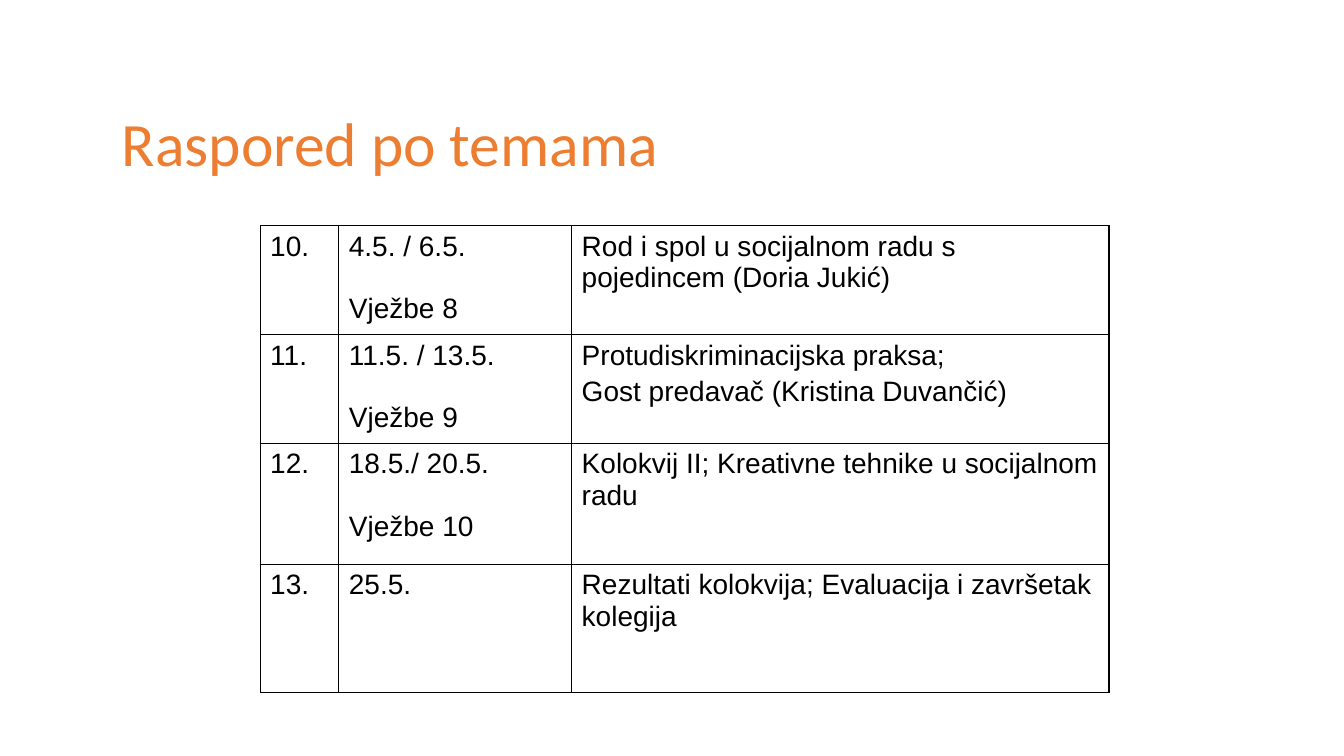
from lxml import etree
from pptx import Presentation
from pptx import util as u
from pptx.dml.color import RGBColor
from pptx.enum import text
from pptx.oxml import ns

COLORS = {"title": "ED7D31", "ink": "000000", "paper": "FFFFFF"}
TITLE_FONT = {"name": "Calibri", "size": u.Pt(44)}
BODY_FONT = {"name": "Arial", "size": u.Pt(20), "bold": False}


def write(para, words, font, color):
    span = para.add_run()
    span.text = words
    for name, value in font.items():
        setattr(span.font, name, value)
    span.font.color.rgb = RGBColor.from_string(COLORS[color])


def add_borders(cell, color, width):
    properties = cell._tc.get_or_add_tcPr()
    for side in ("lnL", "lnR", "lnT", "lnB"):
        line = etree.SubElement(properties, ns.qn(f"a:{side}"), w=str(width))
        fill = etree.SubElement(line, ns.qn("a:solidFill"))
        etree.SubElement(fill, ns.qn("a:srgbClr"), val=COLORS[color])


deck = Presentation()
deck.slide_width, deck.slide_height = u.Inches(13.33), u.Inches(7.5)
page = deck.slides.add_slide(deck.slide_layouts[6])

# Title
box = page.shapes.add_textbox(u.Inches(1.11), u.Inches(0.83), u.Inches(11.56), u.Inches(1.25))
box.text_frame.word_wrap = True
box.text_frame.vertical_anchor = text.MSO_ANCHOR.MIDDLE
title = box.text_frame.paragraphs[0]
title.line_spacing = 0.9
write(title, "Raspored po temama", TITLE_FONT, "title")

# Schedule: number, dates and exercises, topics
schedule = [
    (["10."], ["4.5. / 6.5.", "Vježbe 8"],
     ["Rod i spol u socijalnom radu s pojedincem (Doria Jukić)"]),
    (["11."], ["11.5. / 13.5.", "Vježbe 9"],
     ["Protudiskriminacijska praksa;", "Gost predavač (Kristina Duvančić)"]),
    (["12."], ["18.5./ 20.5.", "Vježbe 10"],
     ["Kolokvij II; Kreativne tehnike u socijalnom radu"]),
    (["13."], ["25.5."],
     ["Rezultati kolokvija; Evaluacija i završetak kolegija"]),
]
column_widths = [0.78, 2.31, 5.33]
row_heights = [1.03, 1.03, 1.2, 1.27]
paragraph_gaps = [0, 22.5, 4]

frame = page.shapes.add_table(
    len(schedule), len(column_widths), u.Inches(2.58), u.Inches(2.24),
    u.Inches(sum(column_widths)), u.Inches(sum(row_heights)))
table = frame.table
table.first_row = table.horz_banding = False
for column, width in zip(table.columns, column_widths):
    column.width = u.Inches(width)
for row, height in zip(table.rows, row_heights):
    row.height = u.Inches(height)

# Cells
for row, entries in zip(table.rows, schedule):
    for cell, lines, gap in zip(row.cells, entries, paragraph_gaps):
        add_borders(cell, "ink", u.Pt(1))
        cell.fill.solid()
        cell.fill.fore_color.rgb = RGBColor.from_string(COLORS["paper"])
        for index, line in enumerate(lines):
            para = cell.text_frame.add_paragraph() if index else cell.text_frame.paragraphs[0]
            para.space_before = u.Pt(gap if index else 0)
            write(para, line, BODY_FONT, "ink")

deck.save("out.pptx")
